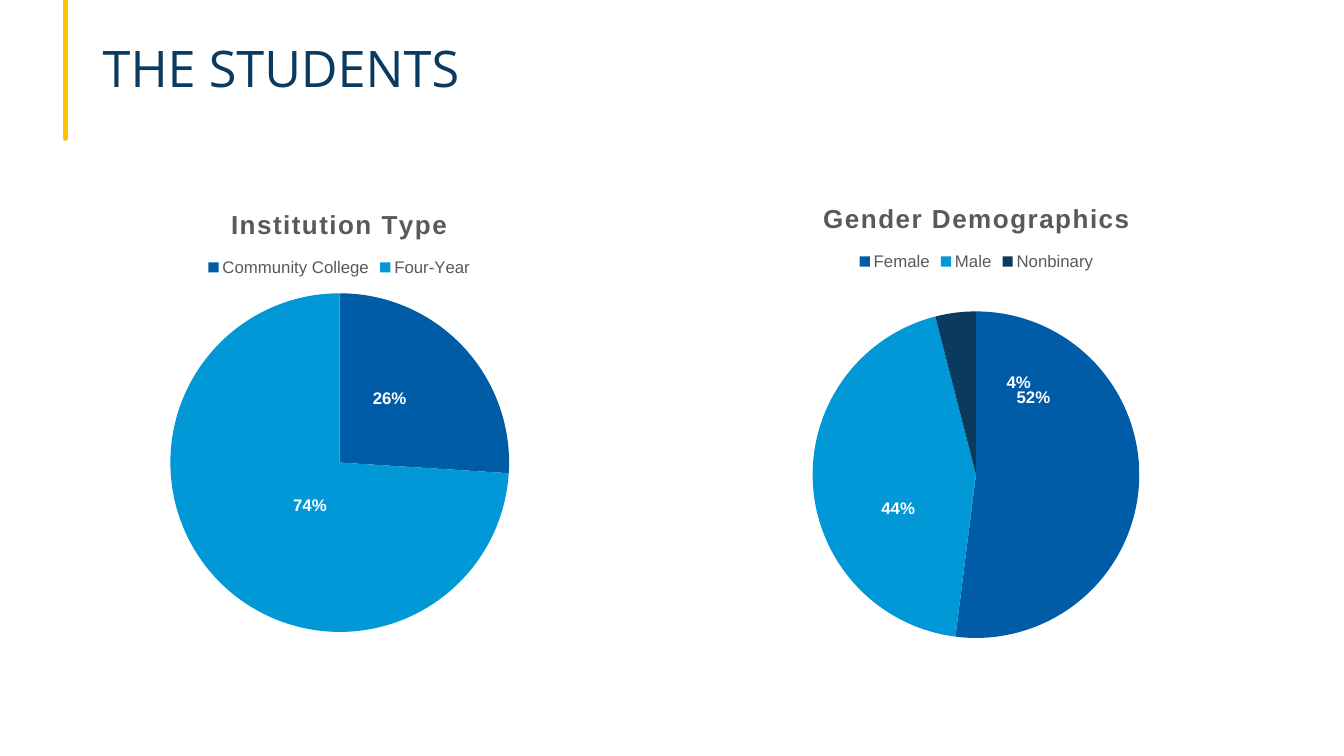
from lxml import etree
from pptx import Presentation
from pptx.chart.data import CategoryChartData
from pptx.dml.color import RGBColor
from pptx.enum.chart import XL_CHART_TYPE, XL_LABEL_POSITION, XL_LEGEND_POSITION
from pptx.enum.shapes import MSO_CONNECTOR
from pptx.enum.text import MSO_ANCHOR
from pptx.oxml.ns import qn
from pptx.util import Pt

PIE = XL_CHART_TYPE.PIE
INSIDE_END = XL_LABEL_POSITION.INSIDE_END
LEGEND_TOP = XL_LEGEND_POSITION.TOP
STRAIGHT = MSO_CONNECTOR.STRAIGHT
TOP = MSO_ANCHOR.TOP

PX = 9144  # EMU per px, 100 px to the inch
NAVY, GOLD, GREY, WHITE = "0A3A5F", "FFC000", "595959", "FFFFFF"
SLICE_COLOURS = ["005CA6", "0098D6", NAVY]


def style_font(font, colour, **values):
    for name, value in values.items():
        setattr(font, name, value)
    font.color.rgb = RGBColor.from_string(colour)


def manual_layout(layout, **values):
    """Fill a c:layout element with settings such as x=0.1 or xMode="edge"."""
    manual = etree.SubElement(layout, qn("c:manualLayout"))
    for name, value in values.items():
        etree.SubElement(manual, qn(f"c:{name}")).set("val", str(value))


deck = Presentation()
deck.slide_width, deck.slide_height = 1333 * PX, 750 * PX
page = deck.slides.add_slide(deck.slide_layouts[6])

# Accent line and heading
accent = page.shapes.add_connector(STRAIGHT, 65 * PX, -13 * PX, 65 * PX, 137 * PX)
accent.line.width = Pt(4)
accent.line.color.rgb = RGBColor.from_string(GOLD)
accent.line._get_or_add_ln().set("cap", "rnd")
etree.SubElement(accent._element.spPr, qn("a:effectLst"))

box = page.shapes.add_textbox(92 * PX, 39 * PX, 1150 * PX, 100 * PX)
box.text_frame.word_wrap = True
box.text_frame.vertical_anchor = TOP
para = box.text_frame.paragraphs[0]
para.line_spacing = 0.9
span = para.add_run()
span.text = "THE STUDENTS"
style_font(span.font, NAVY, size=Pt(36), name="Open Sans")

# Pie charts: frame is left, top, width, height; pie is left, top, diameter;
# each slice has a name, a value and the shift of its label in px
pies = [
    {"title": "Gender Demographics", "frame": (620, 180, 697, 467), "pie": (806, 309, 324),
     "slices": [("Female", 52, (-82, -86)), ("Male", 44, (62, 24)),
                ("Nonbinary", 4, (50, 55))]},
    {"title": "Institution Type", "frame": (-22, 186, 717, 455), "pie": (169, 291, 336),
     "slices": [("Community College", 26, (-52, 39)), ("Four-Year", 74, (72, -59))]},
]

for pie in pies:
    left, top, width, height = pie["frame"]
    names, values, shifts = zip(*pie["slices"])
    data = CategoryChartData()
    data.categories = names
    data.add_series(pie["title"], values)
    chart = page.shapes.add_chart(
        PIE, left * PX, top * PX, width * PX, height * PX, data).chart
    style_font(chart.font, "000000", size=Pt(10), name="Arial")

    chart.has_title = True
    heading = chart.chart_title.text_frame.paragraphs[0].add_run()
    heading.text = pie["title"]
    style_font(heading.font, GREY, size=Pt(18.6), bold=True, name="Arial")
    heading.font._element.set("spc", "100")

    chart.has_legend = True
    chart.legend.position = LEGEND_TOP
    chart.legend.include_in_layout = False
    style_font(chart.legend.font, GREY, size=Pt(12), name="Arial")

    plot_area = chart._chartSpace.chart.plotArea
    for old in plot_area.findall(qn("c:layout")):
        plot_area.remove(old)
    layout = etree.Element(qn("c:layout"))
    plot_area.insert(0, layout)
    pie_left, pie_top, diameter = pie["pie"]
    manual_layout(layout, layoutTarget="inner", xMode="edge", yMode="edge",
                  x=(pie_left - left) / width, y=(pie_top - top) / height,
                  w=diameter / width, h=diameter / height)

    plot = chart.plots[0]
    plot.vary_by_categories = True
    series = plot.series[0]
    labels = series.data_labels
    labels.show_percentage, labels.show_value = True, False
    labels.position = INSIDE_END
    style_font(labels.font, WHITE, size=Pt(12), bold=True, name="Arial")

    for index, (shift_x, shift_y) in enumerate(shifts):
        point = series.points[index]
        point.format.fill.solid()
        point.format.fill.fore_color.rgb = RGBColor.from_string(SLICE_COLOURS[index])
        style_font(point.data_label.font, WHITE, size=Pt(12), bold=True, name="Arial")
        point.data_label.position = INSIDE_END
        label = labels._element.findall(qn("c:dLbl"))[index]
        label.find(qn("c:showVal")).set("val", "0")
        label.find(qn("c:showPercent")).set("val", "1")
        layout = etree.Element(qn("c:layout"))
        label.insert(1, layout)
        manual_layout(layout, x=shift_x / width, y=shift_y / height)

deck.save("out.pptx")
